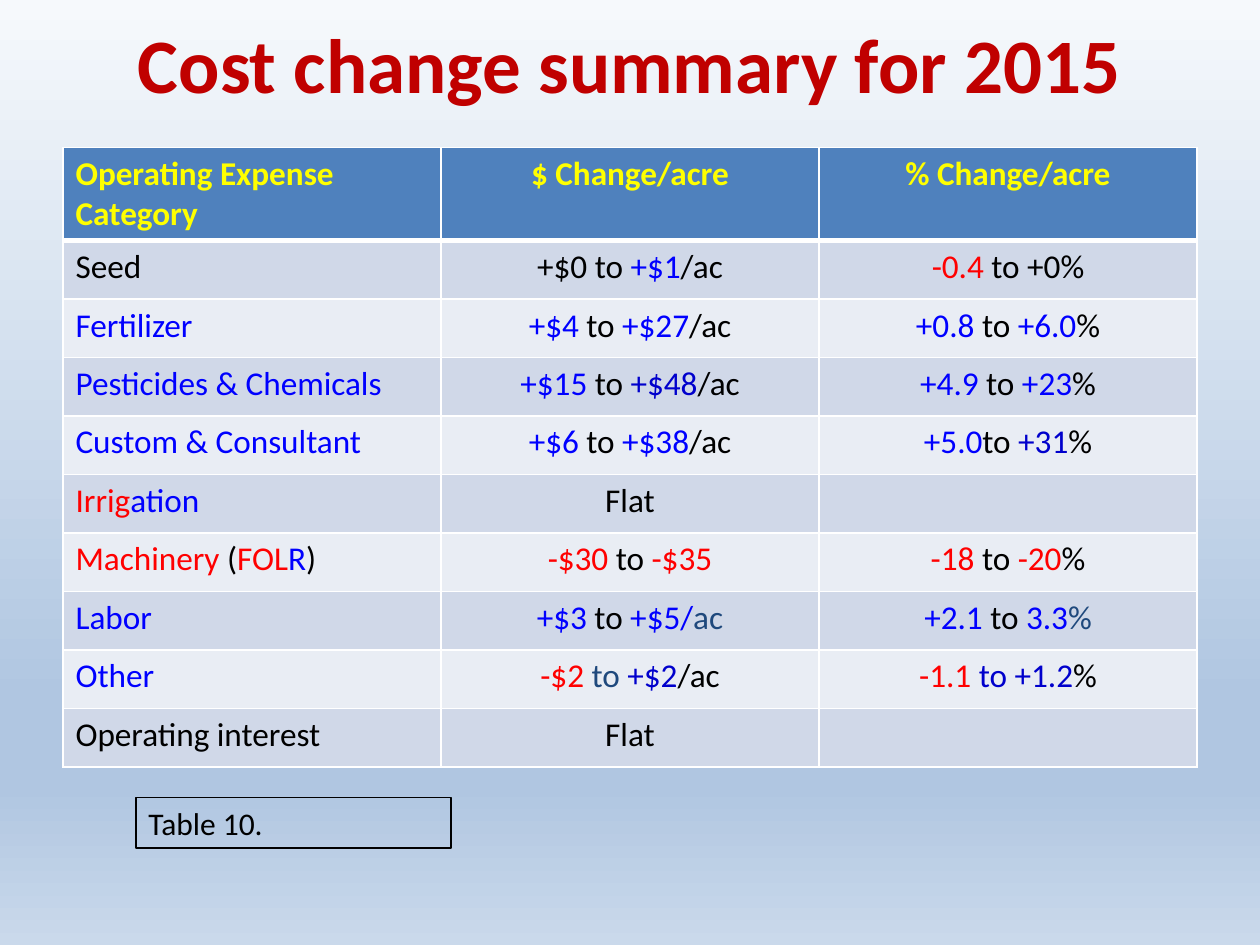
from typing import NamedTuple

from lxml import etree
from pptx import Presentation
from pptx.dml.color import RGBColor
from pptx.enum import shapes, text
from pptx.oxml import parse_xml
from pptx.oxml.ns import nsdecls, qn
from pptx.util import Inches, Pt

# One-letter keys mark the runs of the table text
HUES = {
    "k": "000000", "b": "0000FF", "d": "0000CC", "r": "FF0000",
    "n": "1F497D", "y": "FFFF00", "title": "C00000", "head": "4F81BD",
    "odd": "D0D8E8", "even": "E9EDF4", "rule": "FFFFFF",
}
SKY = [(0, "F6F9FC"), (74, "B0C6E1"), (83, "B0C6E1"), (100, "CAD9EB")]


class Row(NamedTuple):
    """Cells hold runs split by "|", each led by its colour key."""
    name: str
    cost: str
    rate: str


HEAD = Row("yOperating Expense Category", "y$ Change/acre", "y% Change/acre")
ROWS = [
    Row("kSeed", "k+$0 to|b +$1|k/ac", "r-0.4 |kto +0%"),
    Row("bFertilizer", "b+$4 |kto |b+$27|k/ac", "b+0.8 |kto |b+6.0|k%"),
    Row("bPesticides & Chemicals", "b+$15 |kto |d+$48|k/ac",
        "b+4.9 |kto |b+23|k%"),
    Row("bCustom & Consultant", "b+$6 |kto |b+$38|k/ac",
        "b+5.0|kto |d+31|k%"),
    Row("rIrrig|bation", "kFlat", ""),
    Row("rMachinery|k (|rFOL|bR|k)", "r-$30 |kto |r-$35",
        "r-18 |kto |r-20|k%"),
    Row("bLabor", "b+$3 |kto|b +$5/|nac", "b+2.1 |kto|b 3.3|n%"),
    Row("bOther", "r-$2 |nto|d +$2|k/ac", "r-1.1|d to +1.2|k%"),
    Row("kOperating interest", "kFlat", ""),
]


def rgb(key: str) -> RGBColor:
    return RGBColor.from_string(HUES[key])


def place(shape, left: float, top: float, width: float, height: float) -> None:
    spots = {"left": left, "top": top, "width": width, "height": height}
    for name, value in spots.items():
        setattr(shape, name, Inches(value))


def add_run(para, words: str, key: str, size: int, bold: bool = False) -> None:
    run = para.add_run()
    run.text = words
    looks = {"name": "Calibri", "size": Pt(size), "bold": bold}
    for name, value in looks.items():
        setattr(run.font, name, value)
    run.font.color.rgb = rgb(key)


def paint_sky(slide) -> None:
    fill = slide.background.fill
    fill.gradient()
    fill.gradient_angle = 270
    stops = slide.background._cSld.find(".//" + qn("a:gsLst"))
    for stop in list(stops):
        stops.remove(stop)
    for pos, hue in SKY:
        stop = etree.SubElement(stops, qn("a:gs"), pos=str(pos * 1000))
        etree.SubElement(stop, qn("a:srgbClr"), val=hue)


def rule_cell(cell, base: int) -> None:
    props = cell._tc.get_or_add_tcPr()
    widths = {"lnL": 1, "lnR": 1, "lnT": 1, "lnB": base}
    for spot, (tag, width) in enumerate(widths.items()):
        props.insert(spot, parse_xml(
            f'<a:{tag} {nsdecls("a")} w="{Pt(width)}"><a:solidFill>'
            f'<a:srgbClr val="{HUES["rule"]}"/></a:solidFill></a:{tag}>'))


def fill_cell(cell, marks: str, back: str, mid: bool, head: bool) -> None:
    cell.fill.solid()
    cell.fill.fore_color.rgb = rgb(back)
    rule_cell(cell, 3 if head else 1)
    para = cell.text_frame.paragraphs[0]
    para.alignment = text.PP_ALIGN.CENTER if mid else text.PP_ALIGN.LEFT
    for part in filter(None, marks.split("|")):
        add_run(para, part[1:], part[0], 19, head)


def add_costs(slide) -> None:
    grid = slide.shapes.add_table(
        len(ROWS) + 1, len(HEAD), Inches(0.5), Inches(1.17),
        Inches(9), Inches(4.91)).table
    for r, row in enumerate([HEAD, *ROWS]):
        grid.rows[r].height = Inches(4.18 / len(ROWS) if r else 0.73)
        back = ("odd" if r % 2 else "even") if r else "head"
        for c, marks in enumerate(row):
            fill_cell(grid.cell(r, c), marks, back, c > 0, r == 0)


def add_label(slide) -> None:
    box = slide.shapes.add_shape(
        shapes.MSO_SHAPE.RECTANGLE,
        Inches(1.08), Inches(6.33), Inches(2.5), Inches(0.4))
    box.shadow.inherit = False
    box.fill.background()
    box.line.color.rgb = rgb("k")
    box.line.width = Pt(0.75)
    frame = box.text_frame
    looks = {"word_wrap": True, "vertical_anchor": text.MSO_ANCHOR.TOP,
             "auto_size": text.MSO_AUTO_SIZE.SHAPE_TO_FIT_TEXT}
    for name, value in looks.items():
        setattr(frame, name, value)
    para = frame.paragraphs[0]
    para.alignment = text.PP_ALIGN.LEFT
    add_run(para, "Table 10.", "k", 18)


def main() -> None:
    deck = Presentation()
    deck.slide_width, deck.slide_height = Inches(10), Inches(7.5)
    slide = deck.slides.add_slide(deck.slide_layouts[5])
    paint_sky(slide)

    # Title
    title = slide.shapes.title
    place(title, 0.5, 0, 9, 1)
    title.text_frame.vertical_anchor = text.MSO_ANCHOR.MIDDLE
    para = title.text_frame.paragraphs[0]
    para.alignment = text.PP_ALIGN.CENTER
    add_run(para, "Cost change summary for 2015", "title", 44, True)

    # Table and its label
    add_costs(slide)
    add_label(slide)
    deck.save("out.pptx")


if __name__ == "__main__":
    main()
